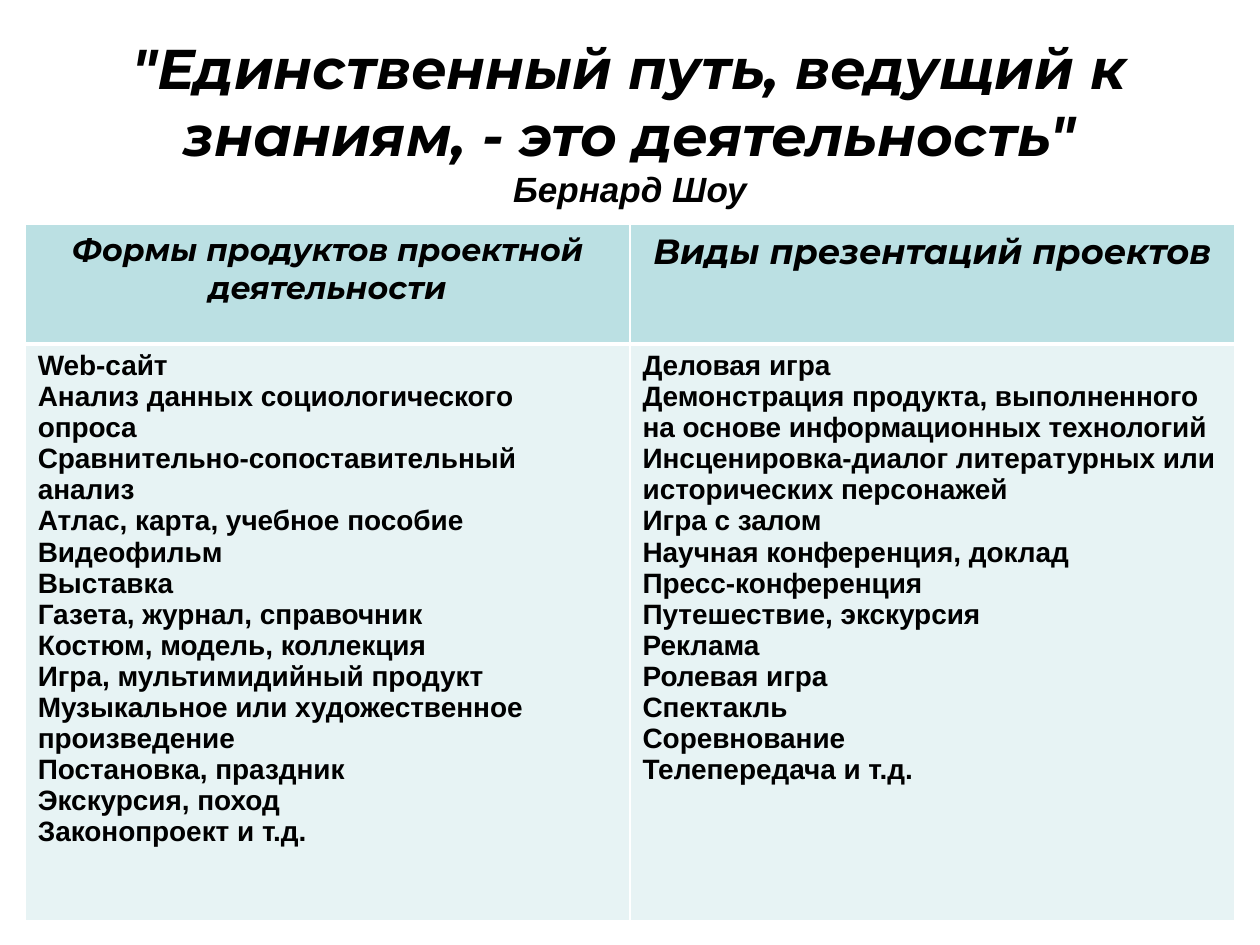
from lxml.etree import SubElement
from pptx import Presentation
from pptx.dml.color import RGBColor
from pptx.enum.text import MSO_ANCHOR, PP_ALIGN
from pptx.oxml.ns import qn
from pptx.util import Inches, Pt

BLACK = RGBColor(0, 0, 0)
WHITE = RGBColor(0xFF, 0xFF, 0xFF)
HEADER_FILL = RGBColor(0xBB, 0xE0, 0xE3)
BODY_FILL = RGBColor(0xE7, 0xF3, 0xF4)

QUOTE = {"size": Pt(32), "name": "Montserrat", "bold": True, "italic": True}
AUTHOR = QUOTE | {"size": Pt(20), "name": "Arial"}
FORMS_HEADING = QUOTE | {"size": Pt(18)}
KINDS_HEADING = QUOTE | {"size": Pt(20)}
ENTRY = AUTHOR | {"size": Pt(16), "italic": False}

PRODUCT_FORMS = [
    "Web-сайт",
    "Анализ данных социологического опроса",
    "Сравнительно-сопоставительный анализ",
    "Атлас, карта, учебное пособие",
    "Видеофильм",
    "Выставка",
    "Газета, журнал, справочник",
    "Костюм, модель, коллекция",
    "Игра, мультимидийный продукт",
    "Музыкальное или художественное произведение",
    "Постановка, праздник",
    "Экскурсия, поход",
    "Законопроект и т.д.",
]
PRESENTATION_KINDS = [
    "Деловая игра",
    "Демонстрация продукта, выполненного на основе информационных технологий",
    "Инсценировка-диалог литературных или исторических персонажей",
    "Игра с залом",
    "Научная конференция, доклад",
    "Пресс-конференция",
    "Путешествие, экскурсия",
    "Реклама",
    "Ролевая игра",
    "Спектакль",
    "Соревнование",
    "Телепередача и т.д.",
]
COLUMNS = [
    ("Формы продуктов проектной деятельности", FORMS_HEADING, PRODUCT_FORMS),
    ("Виды презентаций проектов", KINDS_HEADING, PRESENTATION_KINDS),
]


class SlideBuilder:
    def __init__(self, deck):
        self.width = deck.slide_width
        self.height = deck.slide_height
        self.slide = deck.slides.add_slide(deck.slide_layouts[6])

    def area(self, left, top, width, height):
        return (
            int(left * self.width),
            int(top * self.height),
            int(width * self.width),
            int(height * self.height),
        )

    def run(self, paragraph, text, style):
        run = paragraph.add_run()
        run.text = text
        for attribute, value in style.items():
            setattr(run.font, attribute, value)
        run.font.color.rgb = BLACK

    def title(self, quote, author, place):
        frame = self.slide.shapes.add_textbox(*self.area(*place)).text_frame
        layout = {
            "word_wrap": True,
            "vertical_anchor": MSO_ANCHOR.MIDDLE,
            "margin_bottom": Inches(0.37),
        }
        for attribute, value in layout.items():
            setattr(frame, attribute, value)
        paragraph = frame.paragraphs[0]
        paragraph.alignment = PP_ALIGN.CENTER
        self.run(paragraph, quote, QUOTE)
        paragraph.add_line_break()
        self.run(paragraph, author, AUTHOR)

    def borders(self, cell, widths):
        properties = cell._tc.get_or_add_tcPr()
        for position, (side, width) in enumerate(widths.items()):
            line = SubElement(properties, qn(f"a:ln{side}"), w=str(Pt(width)))
            fill = SubElement(line, qn("a:solidFill"))
            SubElement(fill, qn("a:srgbClr"), val=str(WHITE))
            properties.insert(position, line)

    def cell(self, cell, lines, style, alignment, color, widths):
        cell.fill.solid()
        cell.fill.fore_color.rgb = color
        self.borders(cell, widths)
        frame = cell.text_frame
        for index, line in enumerate(lines):
            paragraph = frame.add_paragraph() if index else frame.paragraphs[0]
            paragraph.alignment = alignment
            self.run(paragraph, line, style)

    def table(self, columns, place, row_shares):
        shape = self.slide.shapes.add_table(
            len(row_shares), len(columns), *self.area(*place)
        )
        table = shape.table
        for row, share in zip(table.rows, row_shares):
            row.height = int(share * self.height)
        header_lines = {"L": 1, "R": 1, "T": 1, "B": 3}
        body_lines = {"L": 1, "R": 1, "T": 3, "B": 1}
        for index, (heading, style, entries) in enumerate(columns):
            self.cell(table.cell(0, index), [heading], style,
                      PP_ALIGN.CENTER, HEADER_FILL, header_lines)
            self.cell(table.cell(1, index), entries, ENTRY,
                      PP_ALIGN.LEFT, BODY_FILL, body_lines)


def main():
    deck = Presentation()
    deck.slide_width = Inches(10)
    deck.slide_height = Inches(7.5)
    builder = SlideBuilder(deck)
    builder.title(
        '"Единственный путь, ведущий к знаниям, - это деятельность"',
        "Бернард Шоу",
        (0.05, 0.06, 0.9, 0.18),
    )
    header_share, body_share = 0.95 / 7.5, 4.58 / 7.5
    builder.table(
        COLUMNS,
        (0.02, 1.78 / 7.5, 0.96, header_share + body_share),
        [header_share, body_share],
    )
    deck.save("out.pptx")


if __name__ == "__main__":
    main()
